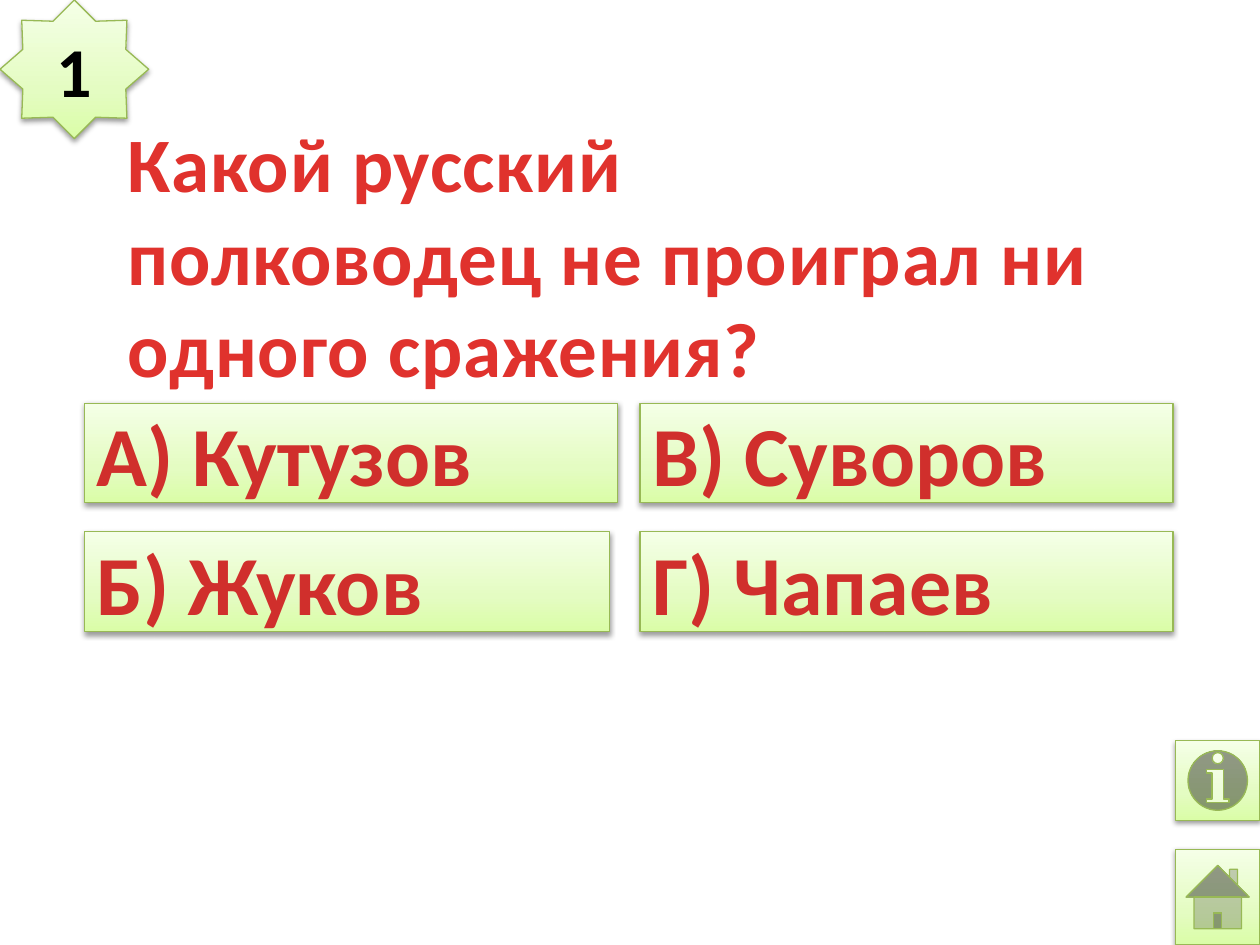
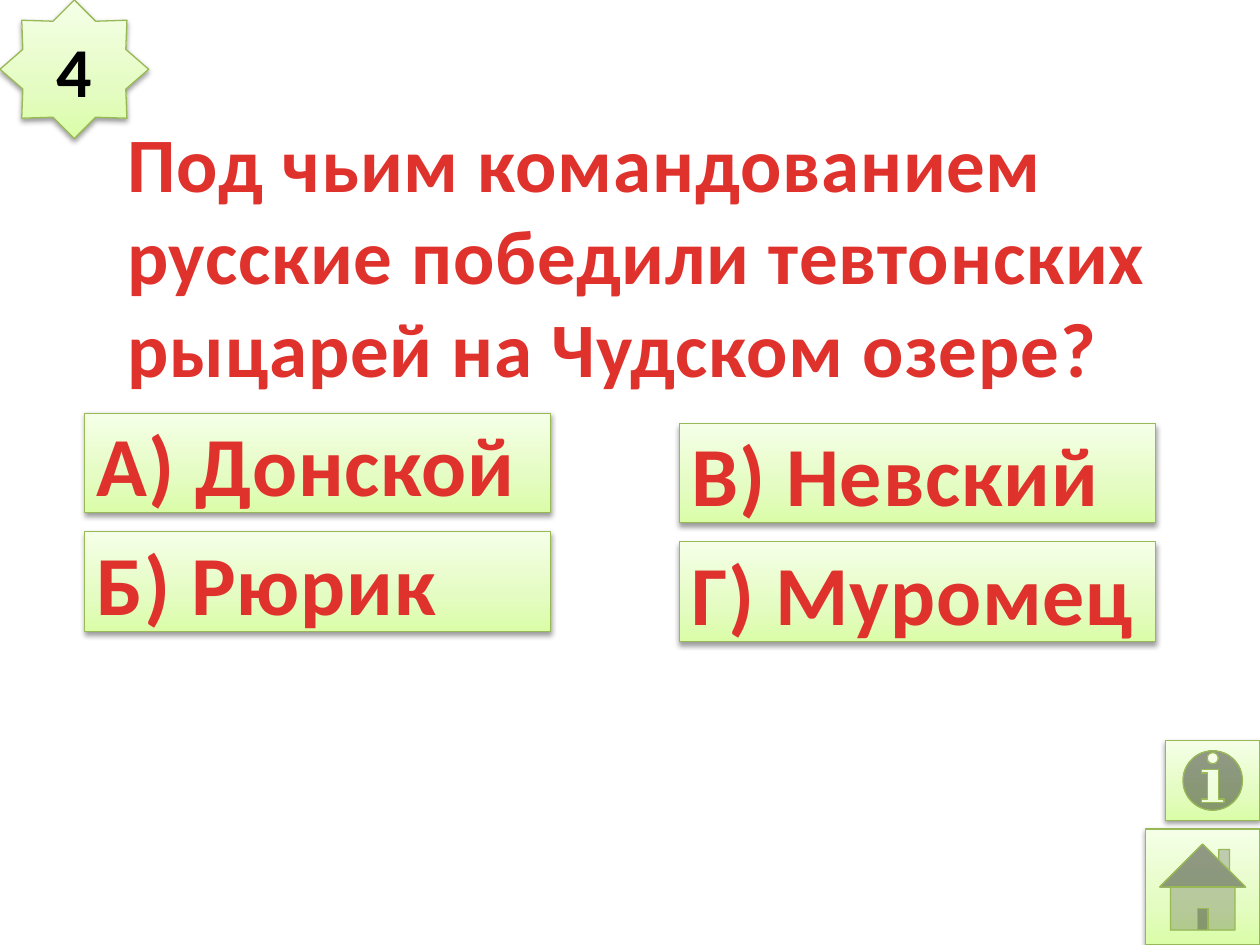
from dataclasses import dataclass

import pptx
import pptx.dml.color
import pptx.enum.shapes
import pptx.enum.text
import pptx.oxml
import pptx.oxml.ns
import pptx.util
from pptx.util import Inches

RGBColor = pptx.dml.color.RGBColor
MSO_SHAPE = pptx.enum.shapes.MSO_SHAPE
PP_ALIGN = pptx.enum.text.PP_ALIGN
MSO_ANCHOR = pptx.enum.text.MSO_ANCHOR
qn = pptx.oxml.ns.qn

FONT = "Calibri"
BLACK = RGBColor(0x00, 0x00, 0x00)
GREEN_LINE = RGBColor(0x98, 0xB9, 0x55)
GREEN_LOW = RGBColor(0xDA, 0xFD, 0xA7)
GREEN_MID = RGBColor(0xE4, 0xFC, 0xC2)
GREEN_HIGH = RGBColor(0xF5, 0xFF, 0xE7)
RED = RGBColor(0xE0, 0x32, 0x2D)
RED_DARK = RGBColor(0xA2, 0x20, 0x1C)
ROSE_LIGHT = RGBColor(0xFC, 0x7C, 0x7A)
ROSE = RGBColor(0xD0, 0x2F, 0x2C)
ROSE_DARK = RGBColor(0xC7, 0x05, 0x00)

UPWARD, DOWNWARD = 90, 270
ANSWER_HEIGHT = 0.79


@dataclass(frozen=True)
class Gradient:
    stops: tuple[tuple[int, RGBColor], ...]
    angle: int


@dataclass(frozen=True)
class TextStyle:
    size: int
    color: RGBColor | Gradient
    spacing: float = 0


@dataclass(frozen=True)
class Box:
    left: float
    top: float
    width: float
    height: float

    def emu(self) -> tuple[int, int, int, int]:
        return (Inches(self.left), Inches(self.top),
                Inches(self.width), Inches(self.height))


@dataclass(frozen=True)
class Answer:
    text: str
    left: float
    top: float
    width: float


@dataclass(frozen=True)
class Question:
    number: str
    text: str
    title_box: Box
    answers: tuple[Answer, ...]
    answer_style: TextStyle
    home: Box
    info: Box


GREEN_FILL = Gradient(((0, GREEN_LOW), (35, GREEN_MID), (100, GREEN_HIGH)), UPWARD)
RED_FILL = Gradient(((25, RED), (100, RED_DARK)), DOWNWARD)
ROSE_FILL = Gradient(((0, ROSE_LIGHT), (75, ROSE), (100, ROSE_DARK)), DOWNWARD)

NUMBER_STYLE = TextStyle(40, BLACK)
TITLE_STYLE = TextStyle(44, RED_FILL, 0.5)
STAR = Box(0, 0, 1.18, 1.1)

QUESTIONS = (
    Question(
        "1",
        "Какой русский\vполководец не проиграл ни\vодного сражения?",
        Box(0.91, 0.76, 10, 2.52),
        (
            Answer("А) Кутузов", 0.67, 3.2, 4.23),
            Answer("Б) Жуков", 0.67, 4.22, 4.17),
            Answer("В) Суворов", 5.08, 3.2, 4.23),
            Answer("Г) Чапаев", 5.08, 4.22, 4.23),
        ),
        TextStyle(48, ROSE_FILL),
        Box(9.33, 6.74, 0.67, 0.76),
        Box(9.33, 5.88, 0.67, 0.63),
    ),
    Question(
        "4",
        "Под чьим командованием русские победили тевтонских "
        "рыцарей на Чудском озере?",
        Box(0.91, 1.39, 8.67, 1.25),
        (
            Answer("А) Донской", 0.67, 3.28, 3.7),
            Answer("Б) Рюрик", 0.67, 4.22, 3.7),
            Answer("В) Невский", 5.39, 3.36, 3.78),
            Answer("Г) Муромец", 5.39, 4.3, 3.78),
        ),
        TextStyle(48, RED_FILL, 0.5),
        Box(9.09, 6.58, 0.91, 0.92),
        Box(9.25, 5.88, 0.75, 0.63),
    ),
)


def set_gradient(fill, owner, gradient: Gradient) -> None:
    fill.gradient()
    fill.gradient_angle = gradient.angle
    stop_list = owner.find(qn("a:gradFill")).find(qn("a:gsLst"))
    for stop in list(stop_list):
        stop_list.remove(stop)
    for percent, color in gradient.stops:
        stop_list.append(pptx.oxml.parse_xml(
            f'<a:gs {pptx.oxml.ns.nsdecls("a")} pos="{percent * 1000}">'
            f'<a:srgbClr val="{color}"/></a:gs>'))


def add_shadow(sp) -> None:
    sp.shadow.inherit = False
    effects = sp._element.spPr.find(qn("a:effectLst"))
    effects.append(pptx.oxml.parse_xml(
        f'<a:outerShdw {pptx.oxml.ns.nsdecls("a")} blurRad="{pptx.util.Pt(3.1)}" '
        f'dist="{pptx.util.Pt(1.6)}" dir="5400000" rotWithShape="0">'
        f'<a:srgbClr val="{BLACK}"><a:alpha val="38000"/></a:srgbClr></a:outerShdw>'))


def write_text(sp, text: str, style: TextStyle, align: PP_ALIGN) -> None:
    tf = sp.text_frame
    tf.word_wrap = True
    tf.auto_size = pptx.enum.text.MSO_AUTO_SIZE.NONE
    tf.vertical_anchor = MSO_ANCHOR.MIDDLE
    p = tf.paragraphs[0]
    p.text = text
    p.alignment = align
    for r in p.runs:
        r.font.name = FONT
        r.font.size = pptx.util.Pt(style.size)
        r.font.bold = True
        rPr = r._r.get_or_add_rPr()
        if isinstance(style.color, Gradient):
            set_gradient(r.font.fill, rPr, style.color)
        else:
            r.font.color.rgb = style.color
        if style.spacing:
            rPr.set("spc", str(round(style.spacing * 100)))


def add_green_shape(s, kind: MSO_SHAPE, box: Box):
    sp = s.shapes.add_shape(kind, *box.emu())
    set_gradient(sp.fill, sp._element.spPr, GREEN_FILL)
    sp.line.color.rgb = GREEN_LINE
    sp.line.width = pptx.util.Pt(0.75)
    add_shadow(sp)
    return sp


def add_question(prs, question: Question) -> None:
    s = prs.slides.add_slide(prs.slide_layouts.get_by_name("Title Only"))
    title = s.shapes.title
    title.left, title.top, title.width, title.height = question.title_box.emu()
    write_text(title, question.text, TITLE_STYLE, PP_ALIGN.LEFT)

    for answer in question.answers:
        box = Box(answer.left, answer.top, answer.width, ANSWER_HEIGHT)
        sp = add_green_shape(s, MSO_SHAPE.RECTANGLE, box)
        write_text(sp, answer.text, question.answer_style, PP_ALIGN.LEFT)

    add_green_shape(s, MSO_SHAPE.ACTION_BUTTON_HOME, question.home)
    star = add_green_shape(s, MSO_SHAPE.STAR_8_POINT, STAR)
    write_text(star, question.number, NUMBER_STYLE, PP_ALIGN.CENTER)
    add_green_shape(s, MSO_SHAPE.ACTION_BUTTON_INFORMATION, question.info)


def main() -> None:
    prs = pptx.Presentation()
    prs.slide_width = Inches(10)
    prs.slide_height = Inches(7.5)
    for question in QUESTIONS:
        add_question(prs, question)
    prs.save("out.pptx")


if __name__ == "__main__":
    main()
